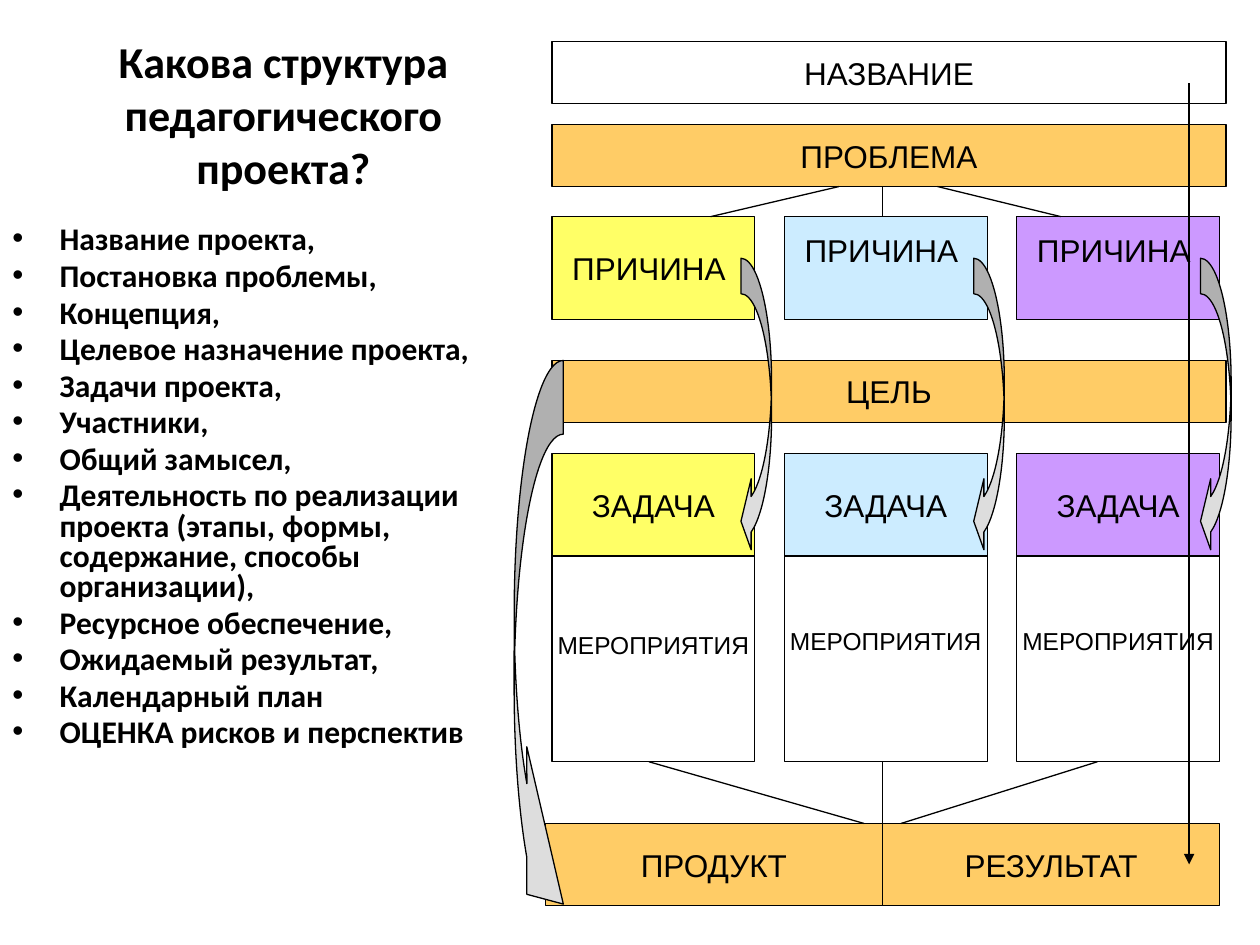
from dataclasses import dataclass

from lxml import etree
from pptx import Presentation
from pptx.dml.color import RGBColor
from pptx.enum.shapes import MSO_CONNECTOR, MSO_SHAPE
from pptx.enum.text import MSO_ANCHOR, PP_ALIGN
from pptx.oxml.ns import qn
from pptx.util import Pt

RECT = MSO_SHAPE.RECTANGLE
LEFT_ARROW = MSO_SHAPE.CURVED_LEFT_ARROW
RIGHT_ARROW = MSO_SHAPE.CURVED_RIGHT_ARROW
STRAIGHT = MSO_CONNECTOR.STRAIGHT
MIDDLE, TOP = MSO_ANCHOR.MIDDLE, MSO_ANCHOR.TOP
CENTER, LEFT = PP_ALIGN.CENTER, PP_ALIGN.LEFT


@dataclass(frozen=True)
class Theme:
    black: RGBColor = RGBColor.from_string("000000")
    white: RGBColor = RGBColor.from_string("FFFFFF")
    orange: RGBColor = RGBColor.from_string("FFCC66")
    yellow: RGBColor = RGBColor.from_string("FFFF66")
    blue: RGBColor = RGBColor.from_string("CCECFF")
    violet: RGBColor = RGBColor.from_string("CC99FF")
    gray: RGBColor = RGBColor.from_string("DDDDDD")
    text_font: str = "Calibri"
    box_font: str = "Arial"
    title: float = 25.2
    normal: float = 18
    small: float = 14
    line: float = 0.75


T = Theme()

prs = Presentation()
prs.slide_width, prs.slide_height = Pt(720), Pt(540)
s = prs.slides.add_slide(prs.slide_layouts[6])


def add_shape(kind, x, y, w, h, fill):
    sp = s.shapes.add_shape(kind, Pt(x), Pt(y), Pt(w), Pt(h))
    sp.shadow.inherit = False
    sp.fill.solid()
    sp.fill.fore_color.rgb = fill
    sp.line.color.rgb = T.black
    sp.line.width = Pt(T.line)
    return sp


def set_text(sp, lines, size, font, frame, para, bold=False):
    tf = sp.text_frame
    for name, value in frame.items():
        setattr(tf, name, value)
    for i, line in enumerate(lines):
        p = tf.add_paragraph() if i else tf.paragraphs[0]
        for name, value in para.items():
            setattr(p, name, value)
        r = p.add_run()
        r.text = line
        r.font.color.rgb = T.black
        for name, value in {"name": font, "size": Pt(size), "bold": bold}.items():
            setattr(r.font, name, value)
    return tf


# Title
sp = s.shapes.add_textbox(Pt(14.4), Pt(20.2), Pt(295.2), Pt(90))
set_text(sp, ["Какова структура педагогического проекта?"], T.title, T.text_font,
         {"word_wrap": True, "vertical_anchor": MIDDLE}, {"alignment": CENTER}, True)

# Bulleted list
items = [
    "Название проекта,",
    "Постановка проблемы,",
    "Концепция,",
    "Целевое назначение проекта,",
    "Задачи проекта,",
    "Участники,",
    "Общий замысел,",
    "Деятельность по реализации проекта (этапы, формы, содержание, способы организации),",
    "Ресурсное обеспечение,",
    "Ожидаемый результат,",
    "Календарный план",
    "ОЦЕНКА рисков и перспектив",
]
sp = s.shapes.add_textbox(Pt(0), Pt(126), Pt(297.4), Pt(356.4))
tf = set_text(sp, items, T.normal, T.text_font,
              {"word_wrap": True, "vertical_anchor": TOP},
              {"alignment": LEFT, "line_spacing": 0.8, "space_before": Pt(3.6)}, True)
for p in tf.paragraphs:
    pPr = p._p.get_or_add_pPr()
    pPr.set("marL", str(Pt(27)))
    pPr.set("indent", str(-Pt(27)))
    etree.SubElement(pPr, qn("a:buFont")).set("typeface", "Arial")
    etree.SubElement(pPr, qn("a:buChar")).set("char", "•")

# Boxes of the scheme: text, x, y, w, h, fill, size, bottom inset
x0, step, col_w, bar_w, bar_h = 315.4, 132.8, 115.9, 385.2, 35.3
boxes = [
    ("НАЗВАНИЕ", x0, 23.8, bar_w, bar_h, T.white, T.normal, 3.6),
    ("ПРОБЛЕМА", x0, 71.3, bar_w, bar_h, T.orange, T.normal, 3.6),
    ("ЦЕЛЬ", x0, 206, bar_w, bar_h, T.orange, T.normal, 3.6),
    ("ПРОДУКТ", 311.6, 470.6, 192.7, 46.8, T.orange, T.normal, 3.6),
    ("РЕЗУЛЬТАТ", 504.3, 470.6, 192.7, 46.8, T.orange, T.normal, 3.6),
]
columns = [(T.yellow, 3.6, 19.7), (T.blue, 24.3, 24.3), (T.violet, 24.3, 24.3)]
for i, (fill, cause_inset, action_inset) in enumerate(columns):
    x = x0 + i * step
    boxes += [
        ("ПРИЧИНА ", x, 123.8, col_w, 58.8, fill, T.normal, cause_inset),
        ("ЗАДАЧА", x, 259.2, col_w, 58.6, fill, T.normal, 3.6),
        ("МЕРОПРИЯТИЯ", x, 317.8, col_w, 117.5, T.white, T.small, action_inset),
    ]
for text, x, y, w, h, fill, size, inset in boxes:
    sp = add_shape(RECT, x, y, w, h, fill)
    set_text(sp, [text], size, T.box_font,
             {"word_wrap": False, "vertical_anchor": MIDDLE, "margin_bottom": Pt(inset)},
             {"alignment": CENTER})

# Curved arrows: cause to task, goal to product
arrows = [(LEFT_ARROW, x, 147.6, 17.5, 170.6, (1.16, 2.32, 0.333))
          for x in (686, 556.4, 423.4)]
arrows.append((RIGHT_ARROW, 293.8, 206, 28.1, 352.8, (1.5, 3, 0.742)))
for kind, x, y, w, h, adjustments in arrows:
    sp = add_shape(kind, x, y, w, h, T.gray)
    for i, value in enumerate(adjustments):
        sp.adjustments[i] = value

# Straight lines; the last one, from name to result, has an arrowhead
lines = [
    (479.5, 106.6, 406.1, 123.8),
    (504.3, 106.6, 504.3, 123.8),
    (535.7, 106.6, 606.2, 123.8),
    (370.8, 435.3, 493.9, 470.6),
    (627.1, 435.3, 514.8, 470.6),
    (504.3, 435.3, 504.3, 470.6),
    (679.5, 47.5, 679.5, 493.9),
]
for x1, y1, x2, y2 in lines:
    c = s.shapes.add_connector(STRAIGHT, Pt(x1), Pt(y1), Pt(x2), Pt(y2))
    c.line.color.rgb = T.black
    c.line.width = Pt(T.line)
    etree.SubElement(c._element.spPr, qn("a:effectLst"))
etree.SubElement(c.line._get_or_add_ln(), qn("a:tailEnd")).set("type", "triangle")

prs.save("out.pptx")
